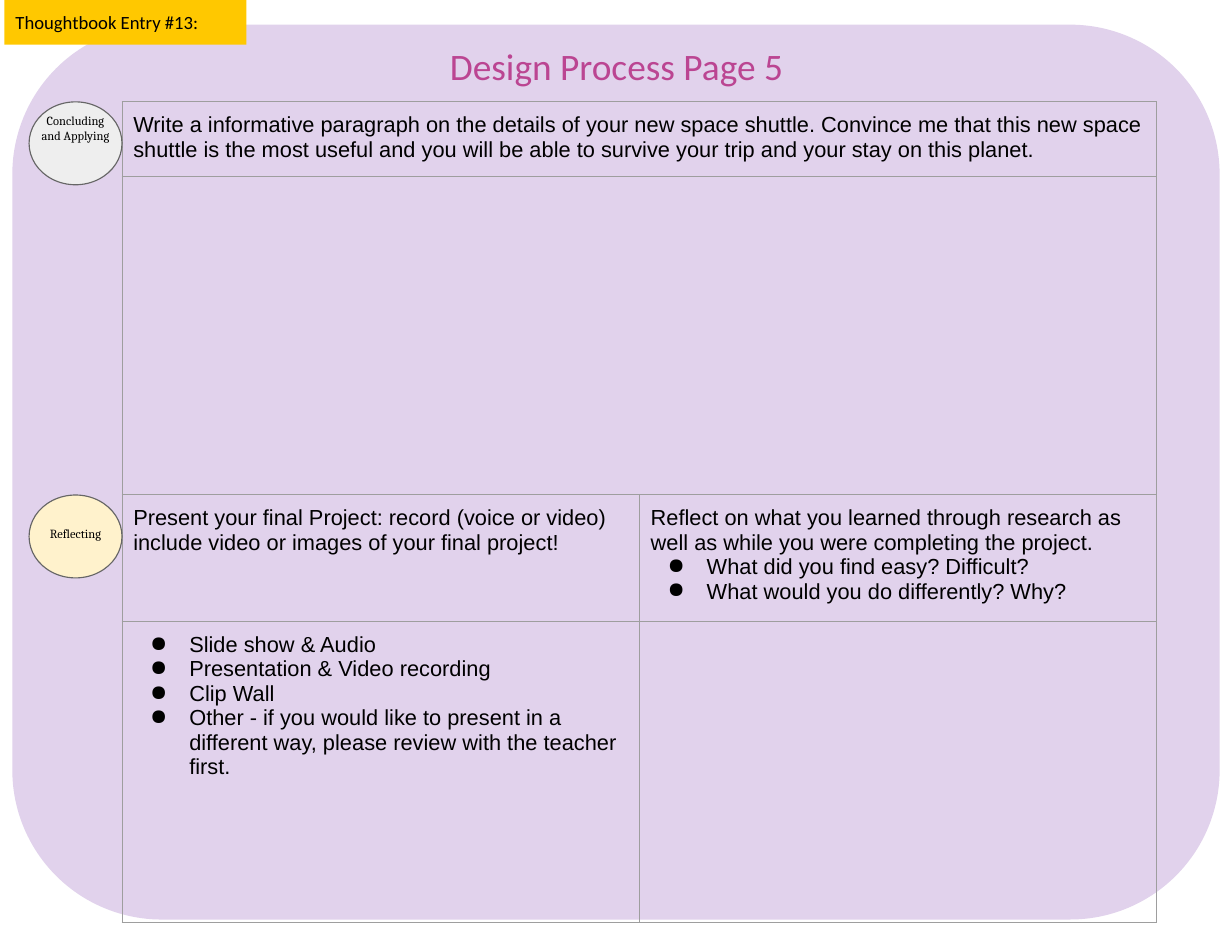
"""Build the "Design Process Page 5" worksheet slide."""
import lxml.etree
import pptx
import pptx.dml.color
import pptx.enum.shapes
import pptx.enum.text
import pptx.oxml.ns
import pptx.util

Inches = pptx.util.Inches
Shapes = pptx.enum.shapes.MSO_SHAPE
Align = pptx.enum.text.PP_ALIGN
Anchor = pptx.enum.text.MSO_ANCHOR
BULLET = "●"
ROW_HEIGHTS = [0.67, 2.84, 1.13, 2.69]
COLUMN_WIDTH = 4.62
TABLE_LEFT, TABLE_TOP = 1.09, 0.91
BADGE_LEFT, BADGE_WIDTH, BADGE_HEIGHT = 0.26, 0.83, 0.74
CELLS = {
    (0, 0): ["Write a informative paragraph on the details of your new space shuttle. "
             "Convince me that this new space shuttle is the most useful and you will be "
             "able to survive your trip and your stay on this planet."],
    (2, 0): ["Present your final Project: record (voice or video) include video or "
             "images of your final project!"],
    (2, 1): ["Reflect on what you learned through research as well as while you were "
             "completing the project.",
             BULLET + "What did you find easy? Difficult?",
             BULLET + "What would you do differently? Why?"],
    (3, 0): [BULLET + "Slide show & Audio",
             BULLET + "Presentation & Video recording",
             BULLET + "Clip Wall",
             BULLET + "Other - if you would like to present in a different way, "
                      "please review with the teacher first."],
}


def color(value):
    """Return the colour for a hex string."""
    return pptx.dml.color.RGBColor.from_string(value)


def add_xml(parent, tag, **attributes):
    """Append a drawing element to its parent."""
    return lxml.etree.SubElement(parent, pptx.oxml.ns.qn(tag), **attributes)


def add_bullet(para):
    """Give a paragraph a hanging black bullet."""
    properties = para._p.get_or_add_pPr()
    properties.set("marL", str(Inches(0.5)))
    properties.set("indent", str(Inches(-0.35)))
    add_xml(add_xml(properties, "a:buClr"), "a:srgbClr", val="000000")
    add_xml(properties, "a:buChar", char=BULLET)


def write(frame, lines, font, size, ink="000000", align=Align.LEFT):
    """Write one paragraph per line, with bullets where marked."""
    for index, line in enumerate(lines):
        para = frame.add_paragraph() if index else frame.paragraphs[0]
        para.alignment = align
        if line.startswith(BULLET):
            add_bullet(para)
        span = para.add_run()
        span.text = line.removeprefix(BULLET)
        span.font.name = font
        span.font.size = pptx.util.Pt(size)
        span.font.color.rgb = color(ink)


def set_frame(frame, inset=0.1, anchor=Anchor.TOP):
    """Set wrapping, margins and anchor of a text frame."""
    frame.word_wrap = True
    frame.vertical_anchor = anchor
    frame.margin_left = frame.margin_right = Inches(inset)
    frame.margin_top = frame.margin_bottom = Inches(inset)


def add_shape(page, kind, left, top, width, height, fill, line=None):
    """Add a flat preset shape."""
    shape = page.shapes.add_shape(
        kind, Inches(left), Inches(top), Inches(width), Inches(height))
    shape.shadow.inherit = False
    shape.fill.solid()
    shape.fill.fore_color.rgb = color(fill)
    if line:
        shape.line.color.rgb = color(line)
        shape.line.width = pptx.util.Pt(0.75)
    else:
        shape.line.fill.background()
    return shape


def add_badge(page, top, fill, label, label_top, label_height):
    """Add an ellipse with its label in front."""
    add_shape(page, Shapes.OVAL, BADGE_LEFT, top, BADGE_WIDTH, BADGE_HEIGHT, fill, "666666")
    box = page.shapes.add_textbox(Inches(BADGE_LEFT), Inches(label_top),
                                  Inches(BADGE_WIDTH), Inches(label_height))
    set_frame(box.text_frame)
    write(box.text_frame, [label], "Cambria", 8, align=Align.CENTER)


def place_title(page):
    """Format the title and bring it in front of the backdrop."""
    title = page.shapes.title
    title.element.getparent().append(title.element)
    title.left, title.top = Inches(0.12), Inches(0.26)
    title.width, title.height = Inches(10.77), Inches(0.65)
    set_frame(title.text_frame, 0.12, Anchor.BOTTOM)
    write(title.text_frame, ["Design Process Page 5"], "Calibri", 24, "BB4592", Align.CENTER)


def style_cell(cell):
    """Give a cell grey borders, even margins and no fill."""
    properties = cell._tc.get_or_add_tcPr()
    for side in "LRTB":
        line = add_xml(properties, f"a:ln{side}", w=str(pptx.util.Pt(0.75)))
        add_xml(add_xml(line, "a:solidFill"), "a:srgbClr", val="9E9E9E")
    cell.fill.background()
    cell.margin_left = cell.margin_right = Inches(0.1)
    cell.margin_top = cell.margin_bottom = Inches(0.1)


def add_worksheet(page):
    """Add the table of tasks and answer spaces."""
    table = page.shapes.add_table(
        len(ROW_HEIGHTS), 2, Inches(TABLE_LEFT), Inches(TABLE_TOP),
        Inches(2 * COLUMN_WIDTH), Inches(sum(ROW_HEIGHTS))).table
    table.first_row = table.horz_banding = False
    for column in table.columns:
        column.width = Inches(COLUMN_WIDTH)
    for row, height in zip(table.rows, ROW_HEIGHTS):
        row.height = Inches(height)
    for cell in table.iter_cells():
        style_cell(cell)
    for row in (0, 1):
        table.cell(row, 0).merge(table.cell(row, 1))
    for (row, column), lines in CELLS.items():
        write(table.cell(row, column).text_frame, lines, "Arial", 14)


def main():
    """Build and save the deck."""
    deck = pptx.Presentation()
    deck.slide_width, deck.slide_height = Inches(11), Inches(8.5)
    page = deck.slides.add_slide(deck.slide_layouts[5])
    backdrop = add_shape(page, Shapes.ROUNDED_RECTANGLE, 0.11, 0.22, 10.78, 7.99, "E1D2EC")
    backdrop.adjustments[0] = 0.167
    place_title(page)
    add_worksheet(page)
    add_badge(page, TABLE_TOP, "EEEEEE", "Concluding and Applying", TABLE_TOP, BADGE_HEIGHT)
    reflecting_top = TABLE_TOP + sum(ROW_HEIGHTS[:2])
    add_badge(page, reflecting_top, "FFF2CC", "Reflecting", reflecting_top + 0.21, 0.21)
    tab = add_shape(page, Shapes.RECTANGLE, 0.04, 0, 2.16, 0.4, "FFC800")
    set_frame(tab.text_frame)
    write(tab.text_frame, ["Thoughtbook Entry #13:"], "Calibri", 12)
    deck.save("out.pptx")


if __name__ == "__main__":
    main()
